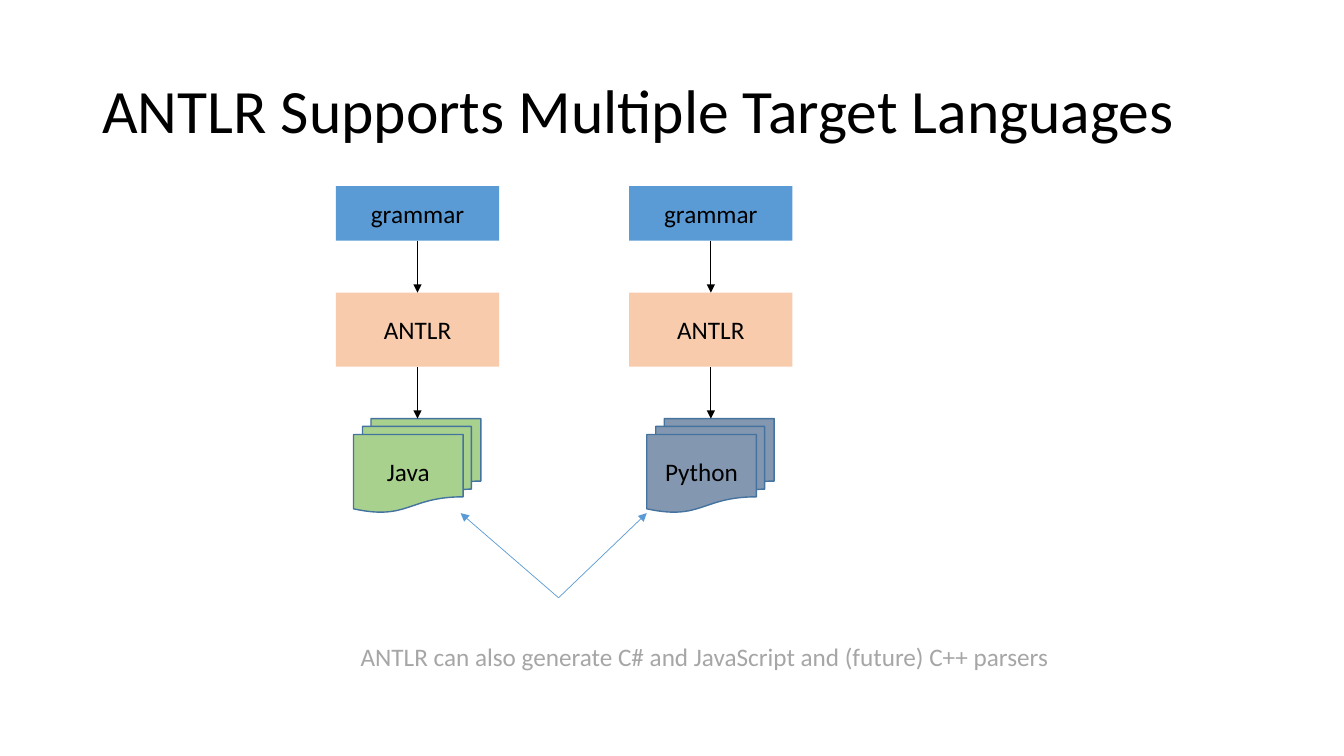
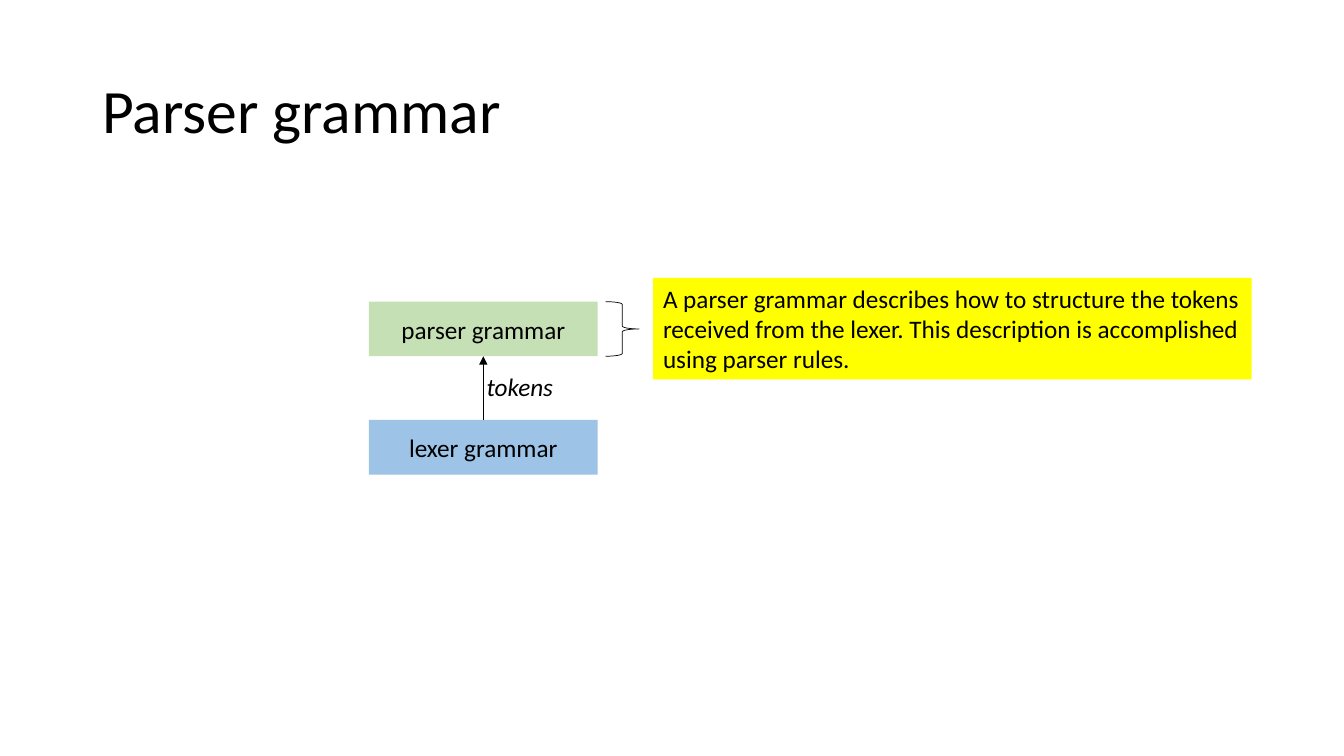
import pptx
import pptx.util
import pptx.dml.color
import pptx.enum.shapes
import pptx.enum.text
import pptx.oxml.ns
import lxml.etree

Pt = pptx.util.Pt
RGBColor = pptx.dml.color.RGBColor
MSO_SHAPE = pptx.enum.shapes.MSO_SHAPE
PP_ALIGN = pptx.enum.text.PP_ALIGN
MSO_ANCHOR = pptx.enum.text.MSO_ANCHOR

BLACK = RGBColor(0x00, 0x00, 0x00)
GRAY = RGBColor(0xA6, 0xA6, 0xA6)
BLUE = RGBColor(0x5B, 0x9B, 0xD5)
DARK_BLUE = RGBColor(0x43, 0x73, 0x9E)
LIGHT_BLUE = RGBColor(0x9D, 0xC3, 0xE6)
PEACH = RGBColor(0xF8, 0xCB, 0xAD)
GREEN = RGBColor(0xA9, 0xD1, 0x8E)
LIGHT_GREEN = RGBColor(0xC5, 0xE0, 0xB4)
SLATE = RGBColor(0x84, 0x97, 0xB0)
YELLOW = RGBColor(0xFF, 0xFF, 0x00)


class Deck:
    """Shared style plus the slide being drawn; lengths are in points."""

    FONT = "Calibri"
    TITLE_SIZE = 44
    BODY_SIZE = 18
    THIN = 0.5

    def __init__(self):
        self.prs = pptx.Presentation()
        self.prs.slide_width = Pt(960)
        self.prs.slide_height = Pt(540)
        self.slide = None

    def new_slide(self, title):
        self.slide = self.prs.slides.add_slide(self.prs.slide_layouts[6])
        heading = self.label(title, 66, 28.8, 828, 104.4, size=self.TITLE_SIZE, wrap=True)
        heading.text_frame.vertical_anchor = MSO_ANCHOR.MIDDLE
        heading.text_frame.paragraphs[0].line_spacing = 0.9

    def set_text(self, shape, text, size=BODY_SIZE, color=BLACK, italic=False):
        shape.text_frame.text = text
        font = shape.text_frame.paragraphs[0].runs[0].font
        font.name = self.FONT
        font.size = Pt(size)
        font.color.rgb = color
        font.italic = italic

    def label(self, text, left, top, width, height, wrap=False, fill=None, **style):
        box = self.slide.shapes.add_textbox(Pt(left), Pt(top), Pt(width), Pt(height))
        box.text_frame.word_wrap = wrap
        if fill is not None:
            box.fill.solid()
            box.fill.fore_color.rgb = fill
        self.set_text(box, text, **style)
        return box

    def shape(self, kind, left, top, width, height, text="", fill=None, line=None, weight=THIN):
        shape = self.slide.shapes.add_shape(kind, Pt(left), Pt(top), Pt(width), Pt(height))
        shape.shadow.inherit = False
        if fill is None:
            shape.fill.background()
        else:
            shape.fill.solid()
            shape.fill.fore_color.rgb = fill
        if line is None:
            shape.line.fill.background()
        else:
            shape.line.color.rgb = line
            shape.line.width = Pt(weight)
        if text:
            self.set_text(shape, text)
            shape.text_frame.vertical_anchor = MSO_ANCHOR.MIDDLE
            shape.text_frame.paragraphs[0].alignment = PP_ALIGN.CENTER
        return shape

    def arrow(self, start, end, color=BLACK, source=None, target=None):
        """source and target are optional (shape, side) pairs to join."""
        arrow = self.slide.shapes.add_connector(
            pptx.enum.shapes.MSO_CONNECTOR.STRAIGHT, *(Pt(v) for v in (*start, *end)))
        arrow.line.color.rgb = color
        arrow.line.width = Pt(self.THIN)
        if source:
            arrow.begin_connect(*source)
        if target:
            arrow.end_connect(*target)
        qn = pptx.oxml.ns.qn
        properties = arrow.element.spPr
        lxml.etree.SubElement(properties.find(qn("a:ln")), qn("a:tailEnd"), type="triangle")
        lxml.etree.SubElement(properties, qn("a:effectLst"))


def target_languages(deck):
    deck.new_slide("ANTLR Supports Multiple Target Languages")
    deck.label("ANTLR can also generate C# and JavaScript and (future) C++ parsers",
               250.5, 454.5, 520.5, 29, color=GRAY)

    # One pipeline per target language
    width = 116.5
    for left, language, color in ((240, "Java", GREEN), (449.5, "Python", SLATE)):
        center = left + width / 2
        grammar = deck.shape(MSO_SHAPE.RECTANGLE, left, 133, width, 39, "grammar", BLUE)
        antlr = deck.shape(MSO_SHAPE.RECTANGLE, left, 209, width, 53, "ANTLR", PEACH)
        deck.shape(MSO_SHAPE.FLOWCHART_MULTIDOCUMENT, left + 12.5, 299, 91, 67,
                   language, color, DARK_BLUE, weight=1)
        deck.arrow((center, 172), (center, 209), source=(grammar, 2), target=(antlr, 0))
        deck.arrow((center, 262), (center, 299), source=(antlr, 2))

    # Pointers from the remark to the generated parsers
    for tip in (329, 462):
        deck.arrow((399, 427), (tip, 366.5), BLUE)


def parser_grammar(deck):
    deck.new_slide("Parser grammar")

    # Lexer feeding the parser
    left, width, height = 263.5, 163.5, 39
    parser_top, lexer_top = 215.5, 300
    center = left + width / 2
    lexer = deck.shape(MSO_SHAPE.RECTANGLE, left, lexer_top, width, height,
                       "lexer grammar", LIGHT_BLUE)
    parser = deck.shape(MSO_SHAPE.RECTANGLE, left, parser_top, width, height,
                        "parser grammar", LIGHT_GREEN)
    deck.arrow((center, lexer_top), (center, parser_top + height),
               source=(lexer, 0), target=(parser, 2))
    deck.label("tokens", 340.5, 261.5, 62.5, 29, italic=True)

    # Explanation
    deck.shape(MSO_SHAPE.RIGHT_BRACE, 432.5, parser_top, 24, height, line=BLACK)
    deck.label("A parser grammar describes how to structure the tokens received from "
               "the lexer. This description is accomplished using parser rules.",
               466.5, 198.5, 427.5, 72.5, wrap=True, fill=YELLOW)


def main():
    deck = Deck()
    target_languages(deck)
    parser_grammar(deck)
    deck.prs.save("out.pptx")


if __name__ == "__main__":
    main()
